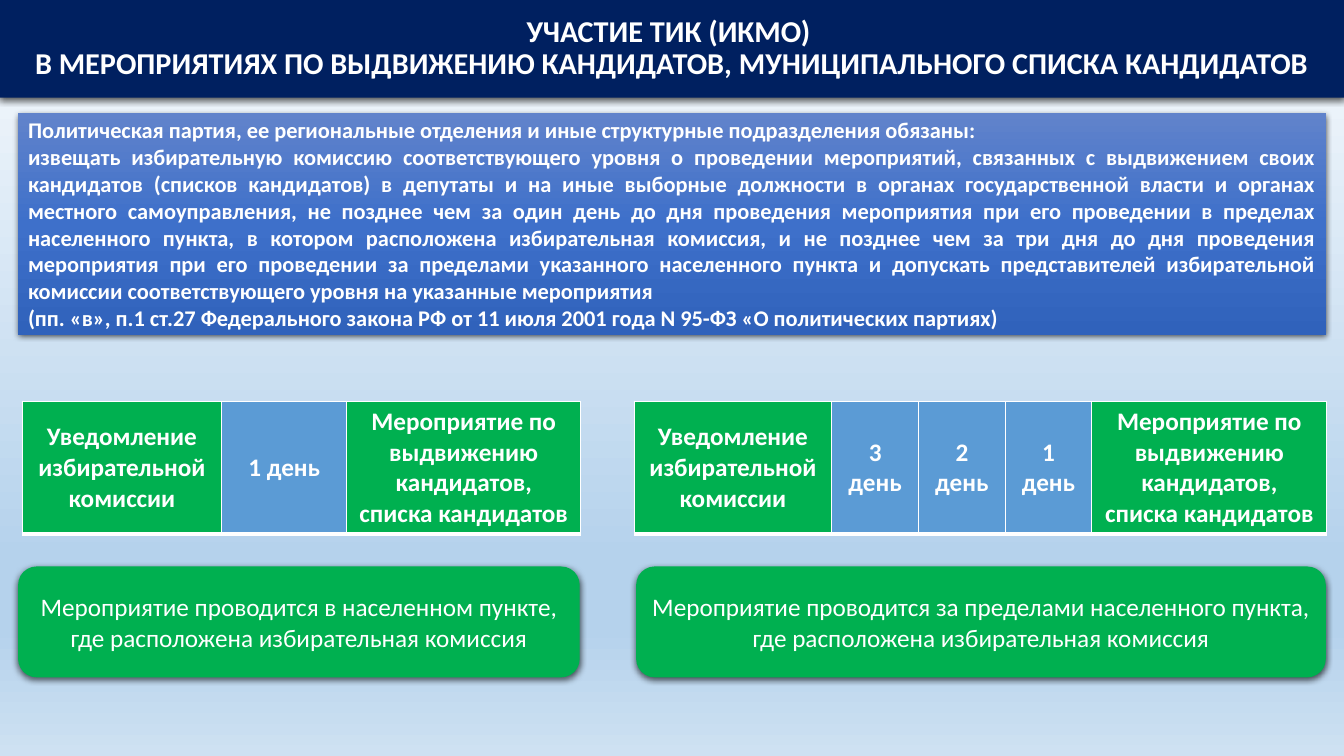
from lxml.etree import SubElement
from pptx import Presentation
from pptx.dml.color import RGBColor
from pptx.enum.shapes import MSO_SHAPE
from pptx.enum.text import MSO_ANCHOR, PP_ALIGN
from pptx.oxml.ns import qn
from pptx.util import Inches, Pt

WHITE = RGBColor(0xFF, 0xFF, 0xFF)
BLACK = RGBColor(0x00, 0x00, 0x00)
NAVY = RGBColor(0x00, 0x20, 0x60)
GREEN = RGBColor(0x00, 0xB0, 0x50)
BLUE = RGBColor(0x5B, 0x9B, 0xD5)
PANEL_STOPS = [(0, RGBColor(0x61, 0x83, 0xCB)), (50, RGBColor(0x3E, 0x70, 0xCA)),
               (100, RGBColor(0x30, 0x62, 0xBB))]
SKY_STOPS = [(0, RGBColor(0xF7, 0xFA, 0xFD)), (74, RGBColor(0xB5, 0xD2, 0xEC)),
             (83, RGBColor(0xB5, 0xD2, 0xEC)), (100, RGBColor(0xCE, 0xE1, 0xF2))]

NOTICE = "Уведомление избирательной комиссии"
EVENT = "Мероприятие по выдвижению кандидатов, списка кандидатов"


def write_text(frame, *texts, size=18, bold=True, align=PP_ALIGN.CENTER, spacing=1.0):
    """Fill a text frame, one paragraph per text; a newline is a line break."""
    frame.word_wrap = True
    for index, text in enumerate(texts):
        para = frame.add_paragraph() if index else frame.paragraphs[0]
        para.text = text.replace("\n", "\v")
        para.alignment = align
        para.line_spacing = spacing
        for span in para.runs:
            span.font.name = "Calibri"
            span.font.size = Pt(size)
            span.font.bold = bold
            span.font.color.rgb = WHITE


class SlideBuilder:
    def __init__(self, page):
        self.page = page

    def gradient(self, fill, owner, stops):
        """Apply a top-to-bottom gradient with any number of stops."""
        fill.gradient()
        fill.gradient_angle = 270
        stop_list = owner.xpath(".//a:gsLst")[0]
        for old_stop in list(stop_list):
            stop_list.remove(old_stop)
        for position, color in stops:
            stop = SubElement(stop_list, qn("a:gs"), pos=str(position * 1000))
            SubElement(stop, qn("a:srgbClr"), val=str(color))

    def background(self, stops):
        fill = self.page.background.fill
        self.gradient(fill, self.page.element.xpath(".//p:bg")[0], stops)

    def shadow(self, box):
        box.shadow.inherit = False
        effects = box.element.spPr.find(qn("a:effectLst"))
        outer = SubElement(effects, qn("a:outerShdw"), blurRad=str(Pt(4.5)),
                           dist=str(Pt(1.5)), dir="5400000", algn="ctr", rotWithShape="0")
        color = SubElement(outer, qn("a:srgbClr"), val=str(BLACK))
        SubElement(color, qn("a:alpha"), val="63000")

    def box(self, left, top, width, height, *texts, fill=GREEN,
            shape=MSO_SHAPE.RECTANGLE, **text_format):
        box = self.page.shapes.add_shape(
            shape, Inches(left), Inches(top), Inches(width), Inches(height))
        if isinstance(fill, list):
            self.gradient(box.fill, box.element, fill)
        else:
            box.fill.solid()
            box.fill.fore_color.rgb = fill
        box.line.fill.background()
        self.shadow(box)
        box.text_frame.vertical_anchor = MSO_ANCHOR.MIDDLE
        write_text(box.text_frame, *texts, **text_format)

    def borders(self, cell):
        properties = cell._tc.get_or_add_tcPr()
        for side, width in (("L", 1), ("R", 1), ("T", 1), ("B", 3)):
            line = SubElement(properties, qn("a:ln" + side), w=str(Pt(width)))
            solid = SubElement(line, qn("a:solidFill"))
            SubElement(solid, qn("a:srgbClr"), val=str(WHITE))

    def timeline(self, left, top, height, columns):
        """One-row table; columns are (width, text, fill)."""
        total = sum(width for width, _, _ in columns)
        table = self.page.shapes.add_table(
            1, len(columns), Inches(left), Inches(top), Inches(total), Inches(height)).table
        for index, (width, text, color) in enumerate(columns):
            table.columns[index].width = Inches(width)
            cell = table.cell(0, index)
            cell.vertical_anchor = MSO_ANCHOR.MIDDLE
            self.borders(cell)
            cell.fill.solid()
            cell.fill.fore_color.rgb = color
            write_text(cell.text_frame, text)


def main():
    deck = Presentation()
    deck.slide_width, deck.slide_height = Inches(13.33), Inches(7.5)
    builder = SlideBuilder(deck.slides.add_slide(deck.slide_layouts[6]))
    builder.background(SKY_STOPS)

    # Title band
    builder.box(0, 0, 13.33, 0.97,
                "УЧАСТИЕ ТИК (ИКМО) \nВ МЕРОПРИЯТИЯХ ПО ВЫДВИЖЕНИЮ КАНДИДАТОВ, "
                "МУНИЦИПАЛЬНОГО СПИСКА КАНДИДАТОВ",
                fill=NAVY, size=21.6, spacing=0.9)

    # Legal duty panel
    builder.box(0.18, 1.12, 12.97, 2.2,
                "Политическая партия, ее региональные отделения и иные структурные "
                "подразделения обязаны:",
                "извещать избирательную комиссию соответствующего уровня о проведении "
                "мероприятий, связанных с выдвижением своих кандидатов (списков кандидатов) "
                "в депутаты и на иные выборные должности в органах государственной власти и "
                "органах местного самоуправления, не позднее чем за один день до дня "
                "проведения мероприятия при его проведении в пределах населенного пункта, "
                "в котором расположена избирательная комиссия, и не позднее чем за три дня "
                "до дня проведения мероприятия при его проведении за пределами указанного "
                "населенного пункта и допускать представителей избирательной комиссии "
                "соответствующего уровня на указанные мероприятия",
                "(пп. «в», п.1 ст.27 Федерального закона РФ от 11 июля 2001 года N 95-ФЗ "
                "«О политических партиях)",
                fill=PANEL_STOPS, size=16, align=PP_ALIGN.JUSTIFY)

    # Notice timelines
    builder.timeline(0.22, 3.98, 1.3, [
        (1.98, NOTICE, GREEN), (1.24, "1 день", BLUE), (2.32, EVENT, GREEN)])
    countdown = [(0.86, f"{day} день", BLUE) for day in (3, 2, 1)]
    builder.timeline(6.29, 3.98, 1.3, [
        (1.96, NOTICE, GREEN), *countdown, (2.33, EVENT, GREEN)])

    # Captions under the timelines
    for left, width, place in ((0.18, 5.57, "в населенном пункте"),
                               (6.31, 6.84, "за пределами населенного пункта")):
        builder.box(left, 5.62, width, 1.1,
                    f"Мероприятие проводится {place}, где расположена избирательная комиссия",
                    shape=MSO_SHAPE.ROUNDED_RECTANGLE, bold=False)

    deck.save("out.pptx")


if __name__ == "__main__":
    main()
